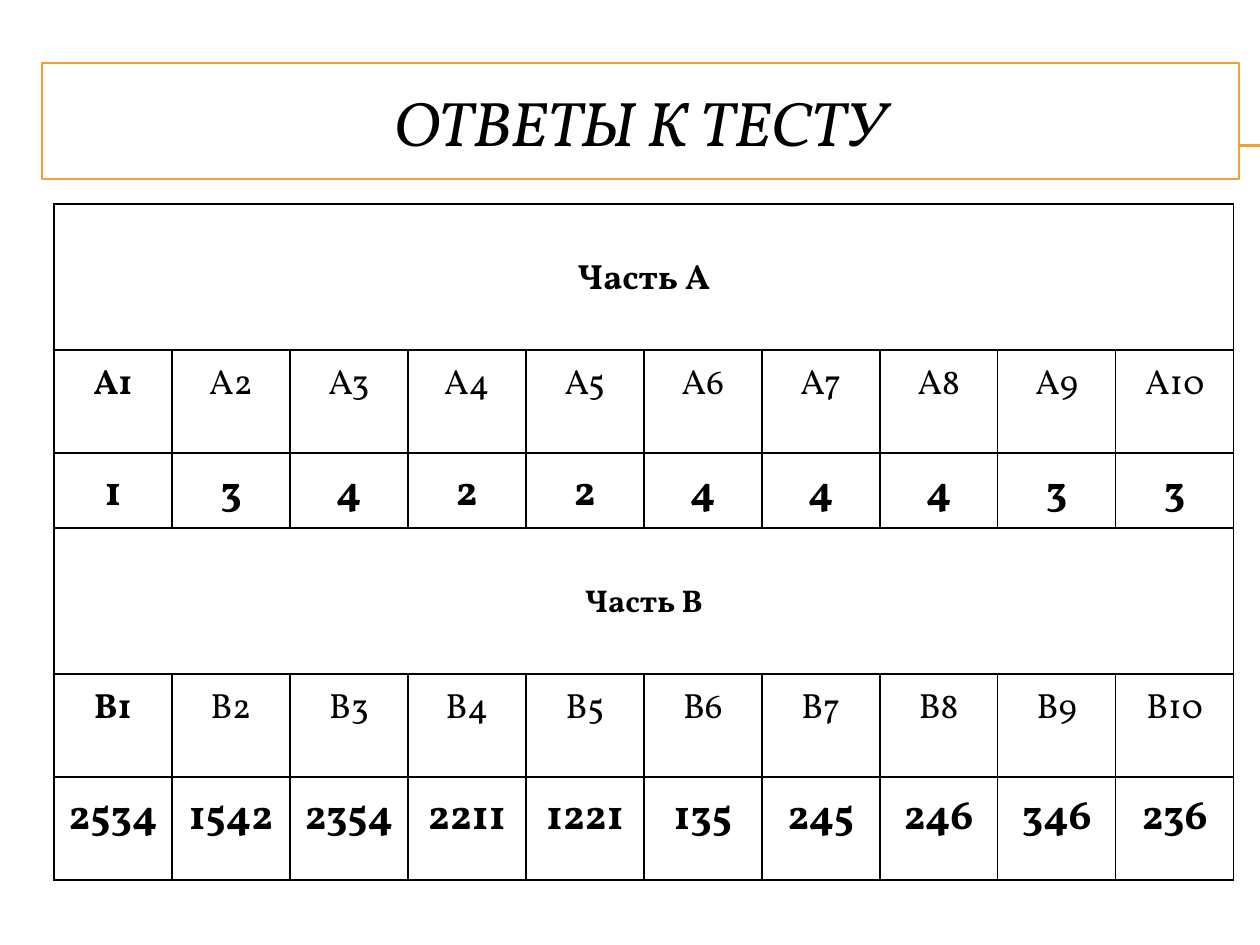
from dataclasses import dataclass

from pptx import Presentation
from pptx.dml.color import RGBColor
from pptx.enum.shapes import MSO_CONNECTOR
from pptx.enum.text import MSO_ANCHOR, PP_ALIGN
from pptx.oxml import parse_xml
from pptx.oxml.ns import nsdecls
from pptx.util import Emu, Pt


@dataclass(frozen=True)
class Theme:
    font: str = "Vollkorn"
    ink: str = "000000"
    paper: str = "FFFFFF"
    accent: str = "F0A22E"
    title_size: int = 36
    answer_size: int = 24
    label_size: int = 20
    small_size: int = 18
    rule_width: float = 0.75
    border_width: float = 1
    line_spacing: float = 1.15


THEME = Theme()
COLUMN_COUNT = 10
COLUMN_WIDTH = 118
CELL_MARGIN = 4
PART_HEIGHT, LABEL_HEIGHT = 146, 103
PARTS = [
    ("А", THEME.label_size, 75, "1 3 4 2 2 4 4 4 3 3"),
    ("В", THEME.small_size, 103, "2534 1542 2354 2211 1221 135 245 246 346 236"),
]


def px(length):
    return Emu(round(length * 914400 / 126))


def color(value):
    return RGBColor.from_string(value)


def write_text(frame, text, size, bold=False, italic=False, spacing=1.0):
    para = frame.paragraphs[0]
    para.alignment = PP_ALIGN.CENTER
    para.line_spacing = spacing
    span = para.add_run()
    span.text = text
    span.font.name = THEME.font
    span.font.size = Pt(size)
    span.font.bold = bold
    span.font.italic = italic
    span.font.color.rgb = color(THEME.ink)


def add_rule(page, left, right, top):
    rule = page.shapes.add_connector(
        MSO_CONNECTOR.STRAIGHT, px(left), px(top), px(right), px(top)
    )
    rule.line.color.rgb = color(THEME.accent)
    rule.line.width = Pt(THEME.rule_width)
    rule._element.spPr.append(parse_xml(f"<a:effectLst {nsdecls('a')}/>"))


def format_title(page, text):
    title = page.shapes.title
    title.left, title.top, title.width, title.height = map(px, (42, 63, 1197, 116))
    title.fill.solid()
    title.fill.fore_color.rgb = color(THEME.paper)
    title.line.color.rgb = color(THEME.accent)
    title.line.width = Pt(THEME.rule_width)
    title.text_frame.vertical_anchor = MSO_ANCHOR.MIDDLE
    write_text(title.text_frame, text, THEME.title_size, italic=True)
    page.shapes._spTree.append(title._element)


def add_borders(cell):
    properties = cell._tc.get_or_add_tcPr()
    for position, side in enumerate(("lnL", "lnR", "lnT", "lnB")):
        border = parse_xml(
            f'<a:{side} {nsdecls("a")} w="{Pt(THEME.border_width)}"><a:solidFill>'
            f'<a:srgbClr val="{THEME.ink}"/></a:solidFill></a:{side}>'
        )
        properties.insert(position, border)


def format_cell(cell):
    cell.fill.solid()
    cell.fill.fore_color.rgb = color(THEME.paper)
    cell.margin_left = cell.margin_right = px(CELL_MARGIN)
    cell.margin_top = cell.margin_bottom = px(CELL_MARGIN)
    add_borders(cell)


def write_cell(cell, text, size, bold):
    write_text(cell.text_frame, text, size, bold=bold, spacing=THEME.line_spacing)


def fill_part(table, first_row, letter, heading_size, answers):
    heading = table.cell(first_row, 0)
    heading.merge(table.cell(first_row, COLUMN_COUNT - 1))
    heading.vertical_anchor = MSO_ANCHOR.MIDDLE
    write_cell(heading, f"Часть {letter}", heading_size, True)
    for column, answer in enumerate(answers.split()):
        label = f"{letter}{column + 1}"
        write_cell(table.cell(first_row + 1, column), label, THEME.label_size, column == 0)
        write_cell(table.cell(first_row + 2, column), answer, THEME.answer_size, True)


def add_answer_table(page, left, top):
    heights = []
    for _, _, answer_height, _ in PARTS:
        heights += [PART_HEIGHT, LABEL_HEIGHT, answer_height]
    table = page.shapes.add_table(
        len(heights), COLUMN_COUNT, px(left), px(top),
        px(COLUMN_WIDTH * COLUMN_COUNT), px(sum(heights)),
    ).table
    table.first_row = table.horz_banding = False
    for column in table.columns:
        column.width = px(COLUMN_WIDTH)
    for row, height in zip(table.rows, heights):
        row.height = px(height)
    for cell in table.iter_cells():
        format_cell(cell)
    for index, (letter, heading_size, _, answers) in enumerate(PARTS):
        fill_part(table, index * 3, letter, heading_size, answers)


def main():
    deck = Presentation()
    deck.slide_width, deck.slide_height = px(1260), px(945)
    page = deck.slides.add_slide(deck.slide_layouts[5])
    for top in (145, 146):
        add_rule(page, 71, 1260, top)
    format_title(page, "ОТВЕТЫ К ТЕСТУ")
    add_answer_table(page, 54, 204)
    deck.save("out.pptx")


if __name__ == "__main__":
    main()
